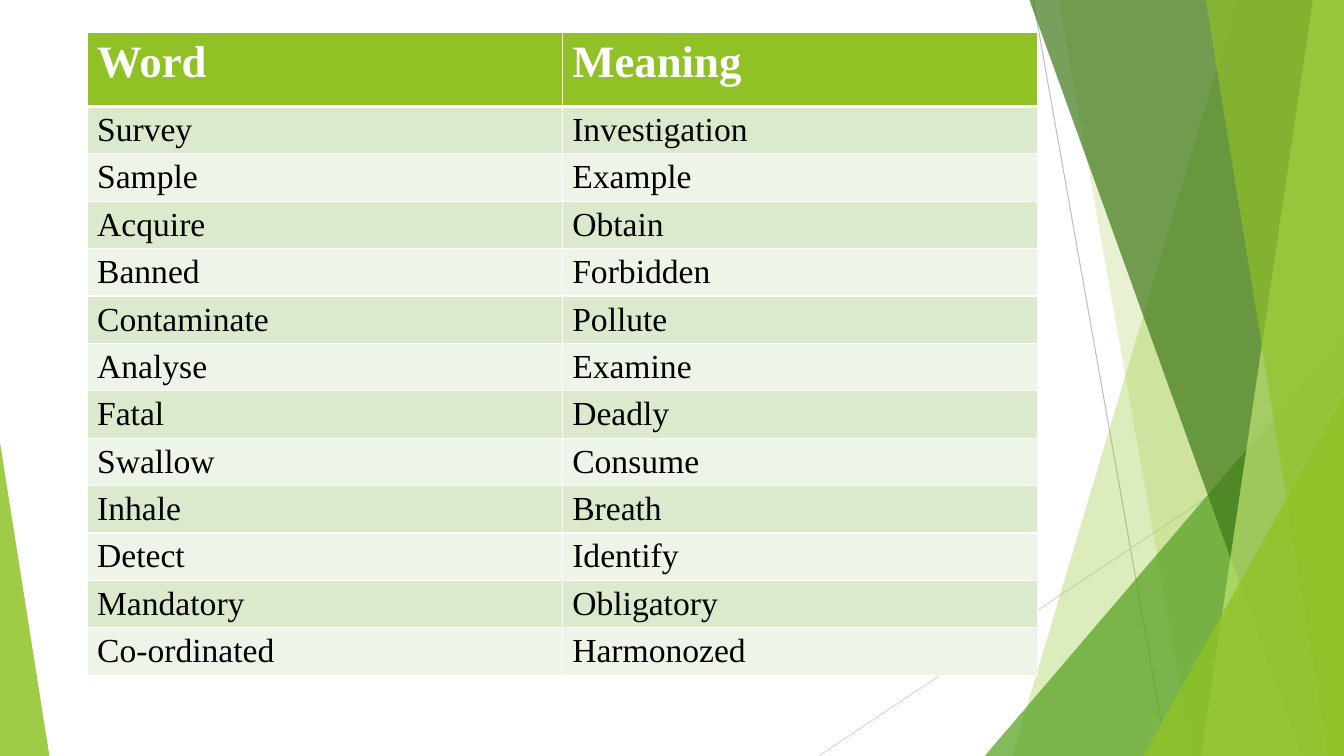
from pptx import Presentation
from pptx.dml.color import RGBColor
from pptx.enum.shapes import MSO_CONNECTOR, MSO_SHAPE
from pptx.oxml.ns import qn
from pptx.util import Pt
from lxml.etree import SubElement

# Content
ROWS = [
    ("Word", "Meaning"),
    ("Survey", "Investigation"),
    ("Sample", "Example"),
    ("Acquire", "Obtain"),
    ("Banned", "Forbidden"),
    ("Contaminate", "Pollute"),
    ("Analyse", "Examine"),
    ("Fatal", "Deadly"),
    ("Swallow", "Consume"),
    ("Inhale", "Breath"),
    ("Detect", "Identify"),
    ("Mandatory", "Obligatory"),
    ("Co-ordinated", "Harmonozed"),
]
COLORS = {
    "lime": "90C226", "green": "54A021", "forest": "3F7819", "pale": "C0E474",
    "band_odd": "DBE9CD", "band_even": "EEF4E8", "white": "FFFFFF",
    "black": "000000", "line_dark": "BFBFBF", "line_light": "D9D9D9",
}
FONT = "Times New Roman"

# Layout, in points
WIDTH, HEIGHT = 960, 540
TABLE_LEFT, TABLE_TOP, COLUMN_WIDTH = 62.2, 22.9, 339.4
HEADER_HEIGHT, ROW_HEIGHT = 53.2, 33.86
FACET_TOP = -0.6

# Thin lines: start, end, colour
LINES = [((738, 0), (833.8, HEIGHT), "line_dark"),
         ((WIDTH, 290.2), (584.8, HEIGHT), "line_light")]

# Facets from back to front, with opacity in percent:
# a band runs from its top x and bottom x to the right edge of the slide,
# a triangle stands on the bottom edge with its apex at one side
FACETS = [
    ("band", 884.2, 722.9, "lime", 30),
    ("band", 756, 851.8, "lime", 20),
    ("triangle", 703.4, 239.8, WIDTH - 703.4, 1, "green", 72),
    ("band", 735.1, 929.5, "forest", 70),
    ("band", 938.2, 858.2, "pale", 70),
    ("band", 861.1, 949, "lime", 65),
    ("triangle", 816.5, 283, WIDTH - 816.5, 1, "lime", 80),
    ("triangle", 0, 316.1, 35.3, 0, "lime", 85),
]


def rgb(name):
    return RGBColor.from_string(COLORS[name])


def write_text(frame, text, size=24, color="black", bold=False):
    paragraph = frame.paragraphs[0]
    run = paragraph.add_run()
    run.text = text
    run.font.name, run.font.size = FONT, Pt(size)
    run.font.bold = bold
    run.font.color.rgb = rgb(color)


def paint_facet(shape, color, opacity):
    shape.shadow.inherit = False
    shape.line.fill.background()
    shape.fill.solid()
    shape.fill.fore_color.rgb = rgb(color)
    color_element = next(shape.fill._xPr.iter(qn("a:srgbClr")))
    SubElement(color_element, qn("a:alpha"), val=str(opacity * 1000))


def add_band(shapes, top_x, bottom_x):
    builder = shapes.build_freeform(top_x, FACET_TOP, scale=Pt(1))
    builder.add_line_segments(
        [(WIDTH, FACET_TOP), (WIDTH, HEIGHT), (bottom_x, HEIGHT)], close=True)
    return builder.convert_to_shape()


def add_triangle(shapes, left, top, width, apex):
    shape = shapes.add_shape(MSO_SHAPE.ISOSCELES_TRIANGLE, Pt(left), Pt(top),
                             Pt(width), Pt(HEIGHT - top))
    shape.adjustments[0] = apex
    return shape


def add_borders(cell, widths):
    properties = cell._tc.get_or_add_tcPr()
    for side in "LRTB":
        line = SubElement(properties, qn("a:ln" + side),
                          w=str(Pt(widths.get(side, 1))))
        fill = SubElement(line, qn("a:solidFill"))
        SubElement(fill, qn("a:srgbClr"), val=COLORS["white"])


def add_background(shapes):
    for start, end, color in LINES:
        line = shapes.add_connector(MSO_CONNECTOR.STRAIGHT,
                                    *(Pt(value) for value in start + end))
        line.line.color.rgb = rgb(color)
        line.line.width = Pt(0.75)
        SubElement(line._element.spPr, qn("a:effectLst"))
    makers = {"band": add_band, "triangle": add_triangle}
    for kind, *geometry, color, opacity in FACETS:
        paint_facet(makers[kind](shapes, *geometry), color, opacity)


def add_word_table(shapes):
    body_height = ROW_HEIGHT * (len(ROWS) - 1)
    table = shapes.add_table(
        len(ROWS), 2, Pt(TABLE_LEFT), Pt(TABLE_TOP),
        Pt(2 * COLUMN_WIDTH), Pt(HEADER_HEIGHT + body_height)).table
    for column in table.columns:
        column.width = Pt(COLUMN_WIDTH)
    for index, words in enumerate(ROWS):
        table.rows[index].height = Pt(ROW_HEIGHT if index else HEADER_HEIGHT)
        if index == 0:
            fill, style = "lime", dict(size=32, color="white", bold=True)
        else:
            fill, style = ("band_odd" if index % 2 else "band_even"), {}
        # A thick rule separates the header from the body
        widths = {0: {"B": 3}, 1: {"T": 3}}.get(index, {})
        for cell, word in zip(table.rows[index].cells, words):
            add_borders(cell, widths)
            cell.fill.solid()
            cell.fill.fore_color.rgb = rgb(fill)
            write_text(cell.text_frame, word, **style)


def main():
    presentation = Presentation()
    presentation.slide_width, presentation.slide_height = Pt(WIDTH), Pt(HEIGHT)
    slide = presentation.slides.add_slide(presentation.slide_layouts[6])
    add_background(slide.shapes)
    add_word_table(slide.shapes)
    presentation.save("out.pptx")


if __name__ == "__main__":
    main()
